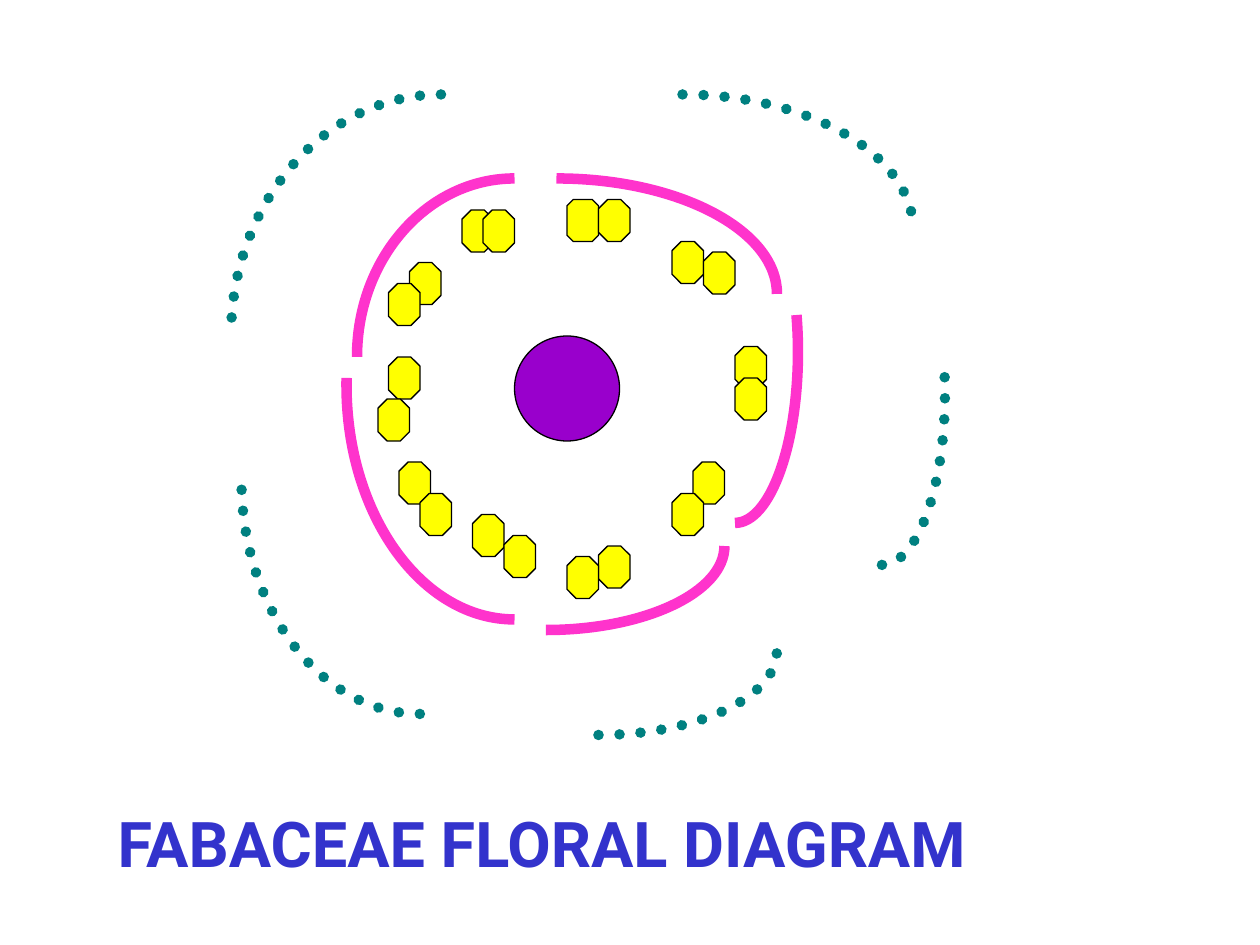
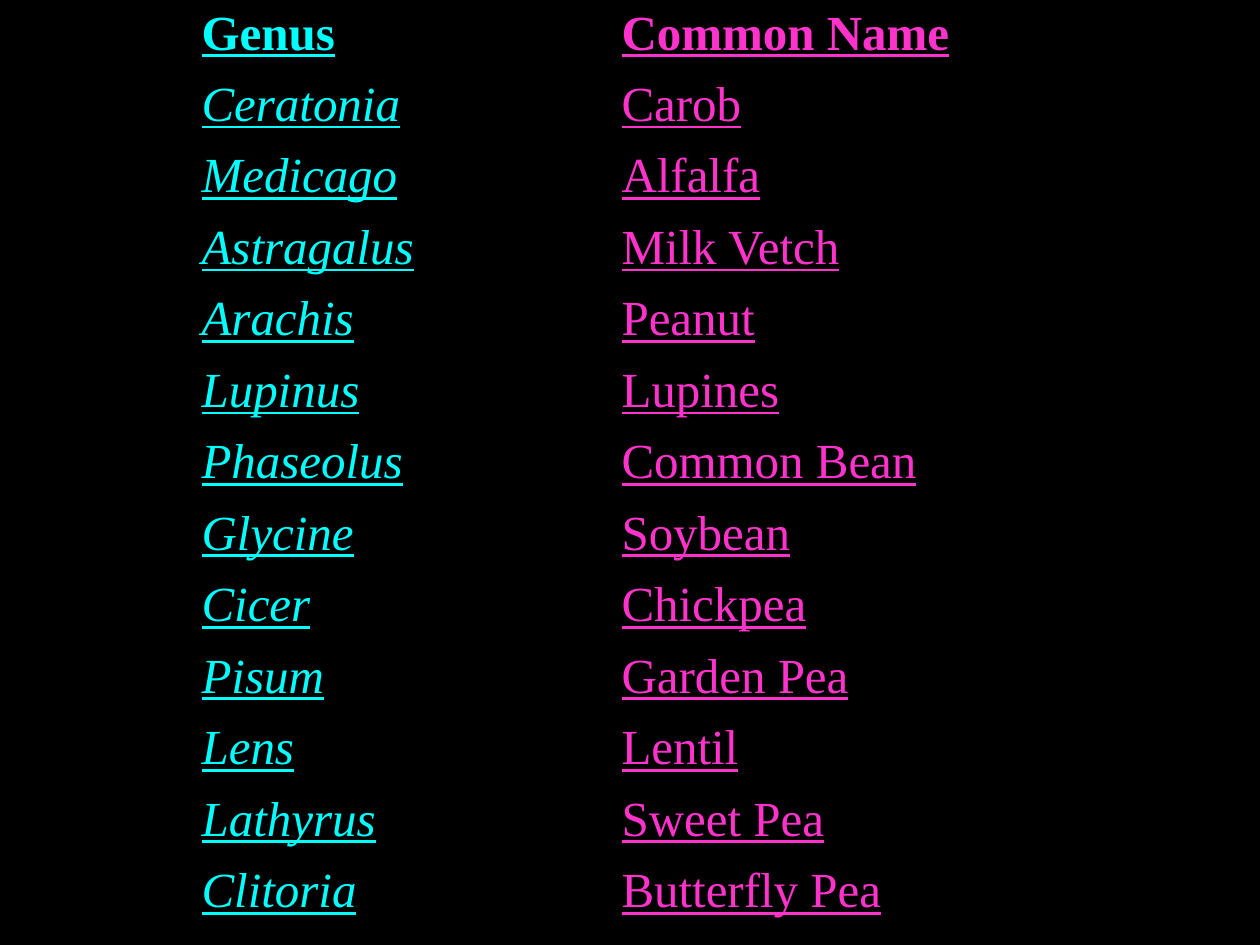
from math import acos, cos, pi, sin, tan

from lxml import etree
from pptx import Presentation
from pptx.dml.color import RGBColor
from pptx.enum.dml import MSO_LINE
from pptx.enum.shapes import MSO_SHAPE
from pptx.enum.text import MSO_ANCHOR, MSO_AUTO_SIZE, PP_ALIGN
from pptx.oxml.ns import qn
from pptx.util import Inches, Pt

OCTAGON, OVAL = MSO_SHAPE.OCTAGON, MSO_SHAPE.OVAL
ROUND_DOT = MSO_LINE.ROUND_DOT
TOP, LEFT = MSO_ANCHOR.TOP, PP_ALIGN.LEFT
FIT_SHAPE = MSO_AUTO_SIZE.SHAPE_TO_FIT_TEXT
TITLE_ONLY, BLANK = 5, 6

WHITE = RGBColor(0xFF, 0xFF, 0xFF)
BLACK = RGBColor(0x00, 0x00, 0x00)
PINK = RGBColor(0xFF, 0x33, 0xCC)
TEAL = RGBColor(0x00, 0x80, 0x80)
YELLOW = RGBColor(0xFF, 0xFF, 0x00)
PURPLE = RGBColor(0x99, 0x00, 0xCC)
BLUE = RGBColor(0x33, 0x33, 0xCC)
CYAN = RGBColor(0x00, 0xFF, 0xFF)

# All places and sizes below count steps of a grid with 12 steps to the inch
STEPS_PER_INCH = 12

DIAGRAM_TITLE = "FABACEAE FLORAL DIAGRAM"
TITLE_BOX = (10, 76, 110, 8.4)
PISTIL = (49, 32, 10, 10)

# Elliptical arcs: start x, start y, outermost x, ellipse centre y, end y
PETALS = [
    (49, 17, 34, 34, 34),
    (53, 17, 74, 28, 28),
    (49, 59, 33, 36.7, 36),
    (70, 49.8, 76, 33.5, 30),
    (52, 60, 69, 52, 52),
]
SEPALS = [
    (84, 53.8, 90, 37.5, 34),
    (65, 9, 87, 22, 22),
    (42, 9, 22, 32, 32),
    (40, 68, 23, 45.7, 45),
    (57, 70, 74, 62, 62),
]

# Each stamen is the left and top of its two anther lobes, back one first
STAMENS = [
    ((44, 20), (46, 20)),
    ((39, 25), (37, 27)),
    ((64, 23), (67, 24)),
    ((45, 49), (48, 51)),
    ((70, 33), (70, 36)),
    ((66, 44), (64, 47)),
    ((37, 34), (36, 38)),
    ((38, 44), (40, 47)),
    ((57, 52), (54, 53)),
    ((54, 19), (57, 19)),
]
LOBE_SIZE = (3, 4)
LOBE_CORNER = 0.29
SHARP_LOBE, SHARP_CORNER = (54, 19), 0.2

GENERA = [
    ("Genus", "Common Name"),
    ("Ceratonia", "Carob"),
    ("Medicago", "Alfalfa"),
    ("Astragalus", "Milk Vetch"),
    ("Arachis", "Peanut"),
    ("Lupinus", "Lupines"),
    ("Phaseolus", "Common Bean"),
    ("Glycine", "Soybean"),
    ("Cicer", "Chickpea"),
    ("Pisum", "Garden Pea"),
    ("Lens", "Lentil"),
    ("Lathyrus", "Sweet Pea"),
    ("Clitoria", "Butterfly Pea"),
]
TABLE_BOX = (18, 0, 80, 6.8 * len(GENERA))
COLUMN_COLORS = (CYAN, PINK)


def grid(steps):
    return Inches(steps / STEPS_PER_INCH)


def add_slide(prs, layout, background):
    slide = prs.slides.add_slide(prs.slide_layouts[layout])
    slide.background.fill.solid()
    slide.background.fill.fore_color.rgb = background
    return slide


def set_font(font, color, **values):
    for name, value in values.items():
        setattr(font, name, value)
    font.color.rgb = color


def add_organ(slide, preset, box, color):
    """Add a filled flower part with a thin black outline."""
    organ = slide.shapes.add_shape(preset, *map(grid, box))
    organ.shadow.inherit = False
    organ.fill.solid()
    organ.fill.fore_color.rgb = color
    organ.line.color.rgb = BLACK
    organ.line.width = Pt(0.75)
    return organ


def arc_points(arc):
    """Return the start, then two control points and an end for each curve."""
    start_x, start_y, outer_x, centre_y, end_y = arc
    radius_x, radius_y = outer_x - start_x, start_y - centre_y
    sweep = acos((end_y - centre_y) / radius_y)
    stops = [0, pi / 2] + ([sweep] if end_y != centre_y else [])

    def place(angle, pull=0):
        return (grid(start_x + radius_x * (sin(angle) + pull * cos(angle))),
                grid(centre_y + radius_y * (cos(angle) - pull * sin(angle))))

    points = [place(0)]
    for first, last in zip(stops, stops[1:]):
        pull = 4 / 3 * tan((last - first) / 4)
        points += [place(first, pull), place(last, -pull), place(last)]
    return points


def bend_segments(curve):
    """Turn every three line segments of a freeform into one cubic curve."""
    segments = list(curve._element.iter(qn("a:lnTo")))
    for first in range(0, len(segments), 3):
        bend = etree.Element(qn("a:cubicBezTo"))
        segments[first].addprevious(bend)
        for segment in segments[first:first + 3]:
            bend.append(segment[0])
            segment.getparent().remove(segment)


def add_arc(slide, arc, color, dotted=False):
    start, *others = arc_points(arc)
    builder = slide.shapes.build_freeform(*start)
    builder.add_line_segments(others, close=False)
    curve = builder.convert_to_shape()
    bend_segments(curve)
    curve.shadow.inherit = False
    curve.fill.background()
    curve.line.color.rgb = color
    curve.line.width = Pt(6)
    if dotted:
        curve.line.dash_style = ROUND_DOT
        curve._element.spPr.find(qn("a:ln")).set("cap", "rnd")


def add_borders(cell, widths):
    """Draw black borders; widths gives points by side, in schema order."""
    properties = cell._tc.get_or_add_tcPr()
    for position, (side, width) in enumerate(widths.items()):
        border = etree.Element(qn(f"a:ln{side}"), w=str(Pt(width)))
        fill = etree.SubElement(border, qn("a:solidFill"))
        etree.SubElement(fill, qn("a:srgbClr"), val=str(BLACK))
        properties.insert(position, border)


def build_floral_diagram(prs):
    slide = add_slide(prs, TITLE_ONLY, WHITE)
    add_organ(slide, OVAL, PISTIL, PURPLE)
    for petal in PETALS:
        add_arc(slide, petal, PINK)
    for sepal in SEPALS:
        add_arc(slide, sepal, TEAL, dotted=True)
    for stamen in STAMENS:
        for place in stamen:
            lobe = add_organ(slide, OCTAGON, place + LOBE_SIZE, YELLOW)
            lobe.adjustments[0] = (SHARP_CORNER if place == SHARP_LOBE
                                   else LOBE_CORNER)

    title = slide.shapes.title
    title.left, title.top, title.width, title.height = map(grid, TITLE_BOX)
    frame = title.text_frame
    frame.text = DIAGRAM_TITLE
    frame.word_wrap = True
    frame.auto_size = FIT_SHAPE
    frame.vertical_anchor = TOP
    frame.paragraphs[0].alignment = LEFT
    set_font(frame.paragraphs[0].runs[0].font, BLUE,
             name="Roboto", size=Pt(36), bold=True)


def build_genera_table(prs):
    slide = add_slide(prs, BLANK, BLACK)
    last_row, last_column = len(GENERA) - 1, len(COLUMN_COLORS) - 1
    table = slide.shapes.add_table(len(GENERA), len(COLUMN_COLORS),
                                   *map(grid, TABLE_BOX)).table
    table.first_row = table.horz_banding = False
    for r, names in enumerate(GENERA):
        for c, (name, color) in enumerate(zip(names, COLUMN_COLORS)):
            cell = table.cell(r, c)
            cell.text = name
            cell.fill.background()
            set_font(cell.text_frame.paragraphs[0].runs[0].font, color,
                     name="Times New Roman", size=Pt(28), underline=True,
                     bold=r == 0, italic=r > 0 and c == 0)
            outer_sides = {"L": c == 0, "R": c == last_column,
                           "T": r == 0, "B": r == last_row}
            add_borders(cell, {side: 2.25 if outer else 1
                               for side, outer in outer_sides.items()})


def main():
    prs = Presentation()
    prs.slide_width, prs.slide_height = Inches(10), Inches(7.5)
    build_floral_diagram(prs)
    build_genera_table(prs)
    prs.save("out.pptx")


if __name__ == "__main__":
    main()
